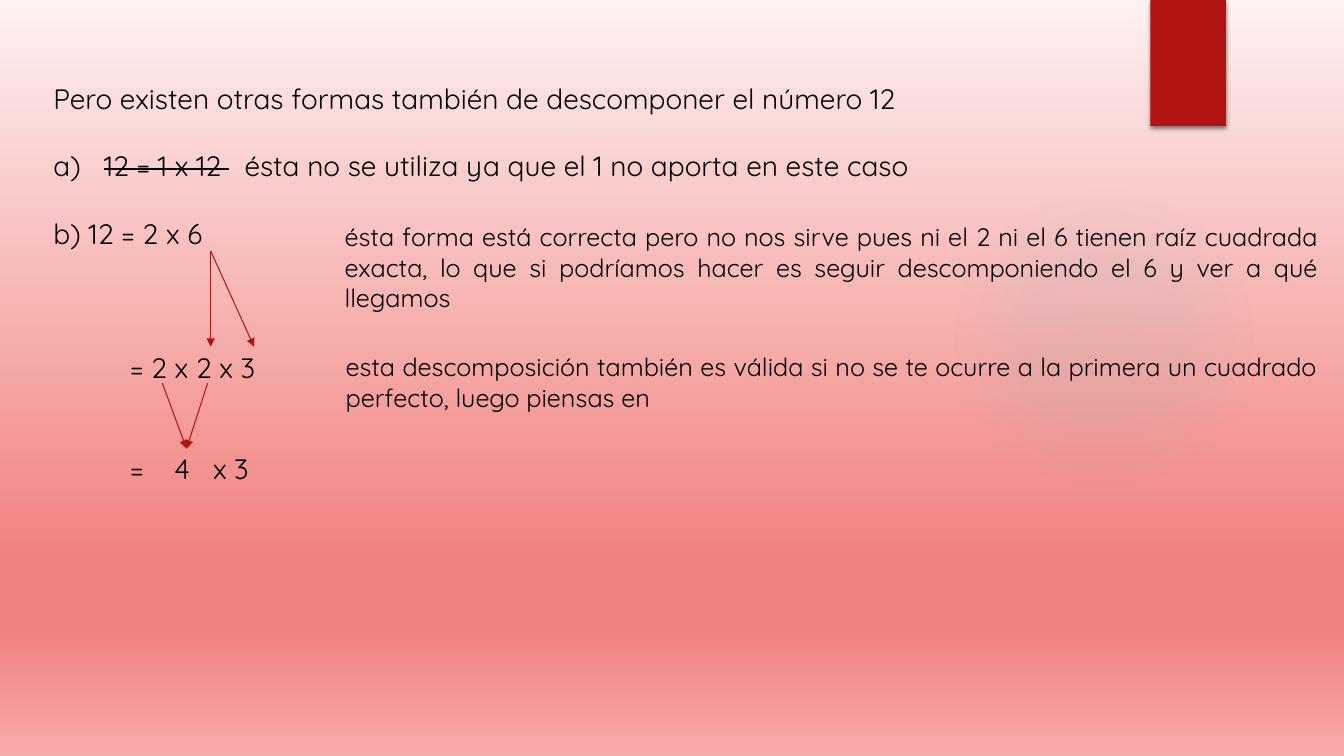
from lxml.etree import SubElement
from pptx import Presentation
from pptx.dml.color import RGBColor
from pptx.enum.shapes import MSO_CONNECTOR as Link, MSO_SHAPE as Form
from pptx.enum.text import MSO_ANCHOR as Anchor, MSO_AUTO_SIZE as Auto, PP_ALIGN as Align
from pptx.oxml.ns import qn
from pptx.util import Inches, Pt

RED = RGBColor(0xB0, 0x15, 0x13)
BLACK = RGBColor(0, 0, 0)
PALE = RGBColor(0xFD, 0xF1, 0xF1)
CORAL = RGBColor(0xF1, 0x81, 0x7F)
PINK = RGBColor(0xF6, 0xAB, 0xAA)
TEAL = RGBColor(0x50, 0xB9, 0xC1)
ROW = 24  # points from one line of the working to the next

TITLE = "Pero existen otras formas también de descomponer el número 12"
NOTES = [
    ((3.32, 2.15, 9.85, 1.01),
     "ésta forma está correcta pero no nos sirve pues ni el 2 ni el 6 tienen raíz "
     "cuadrada exacta, lo que si podríamos hacer es seguir descomponiendo el 6 y "
     "ver a qué llegamos"),
    ((3.33, 3.44, 9.83, 0.71),
     "esta descomposición también es válida si no se te ocurre a la primera un "
     "cuadrado perfecto, luego piensas en"),
]
# Runs with the points by which each is spaced out, empty rows above, left margin
STEPS = [
    ([("b) 12 = 2 x 6", 0)], 1, 0),
    ([("= 2 x 2 x 3", 0)], 3, 0.76),
    ([("=", 0), (" ", 16.5), ("4", 0), (" ", 11), ("x 3", 0)], 2, 0.76),
]
SPLIT = [((2.09, 2.49), (2.09, 3.44)), ((2.09, 2.49), (2.52, 3.44))]
JOIN = [((1.61, 3.8), (1.85, 4.45)), ((2.06, 3.8), (1.85, 4.45))]


def add(parent, tag, **attrs):
    return SubElement(parent, qn(tag), {k: str(v) for k, v in attrs.items()})


def place(shape, box):
    for name, size in zip(("left", "top", "width", "height"), box):
        setattr(shape, name, Inches(size))


def blend(fill, owner, stops, radial=False):
    """Fill with a gradient of (place, colour, opacity) stops, in percent."""
    fill.gradient()
    grad = owner.find(".//" + qn("a:gradFill"))
    for part in list(grad):
        grad.remove(part)
    row = add(grad, "a:gsLst")
    for pos, color, alpha in stops:
        stop = add(row, "a:gs", pos=pos * 1000)
        tint = add(stop, "a:srgbClr", val=color)
        if alpha < 100:
            add(tint, "a:alpha", val=alpha * 1000)
    if radial:
        way = add(grad, "a:path", path="circle")
        add(way, "a:fillToRect", l=50000, t=50000, r=50000, b=50000)
    else:
        add(grad, "a:lin", ang=90 * 60000, scaled=0)


def style(par, size, align=Align.LEFT, gap=0):
    for name, value in {"alignment": align, "space_before": Pt(gap),
                        "space_after": Pt(0)}.items():
        setattr(par, name, value)
    for run in par.runs:
        for name, value in {"name": "Quicksand", "size": Pt(size)}.items():
            setattr(run.font, name, value)
        run.font.color.rgb = BLACK


def indent(par, margin, hang=0):
    """Set the left margin and hanging indent, and return the properties."""
    props = par._p.get_or_add_pPr()
    props.set("marL", str(Inches(margin)))
    props.set("indent", str(-Inches(hang)))
    return props


def write(par, words, spread=0):
    run = par.add_run()
    run.text = words
    if spread:
        run.font._element.set("spc", str(int(spread * 100)))
    return run


def frame(shape, box):
    place(shape, box)
    text = shape.text_frame
    for name, value in {"word_wrap": True, "auto_size": Auto.NONE,
                        "vertical_anchor": Anchor.TOP}.items():
        setattr(text, name, value)
    return text


def backdrop(slide):
    blend(slide.background.fill, slide.element,
          [(0, PALE, 100), (74, CORAL, 100), (83, CORAL, 100), (100, PINK, 100)])
    glow = slide.shapes.add_shape(Form.OVAL, *map(Inches, (9.41, 1.83, 3.08, 3.08)))
    blend(glow.fill, glow.element.spPr,
          [(0, TEAL, 7), (36, TEAL, 6), (69, TEAL, 0)], radial=True)
    tab = slide.shapes.add_shape(Form.RECTANGLE, *map(Inches, (11.41, 0, 0.75, 1.25)))
    tab.fill.solid()
    tab.fill.fore_color.rgb = RED
    for shape in (tab, glow):
        shape.line.fill.background()
        shape.shadow.inherit = False
        slide.shapes.element.insert(2, shape.element)  # behind the text
    effects = tab.element.spPr.find(qn("a:effectLst"))
    shade = add(effects, "a:outerShdw", blurRad=Pt(3), dist=Pt(2),
                dir=90 * 60000, rotWithShape=0)
    add(add(shade, "a:srgbClr", val=BLACK), "a:alpha", val=45000)


def working(slide, box):
    """Write the heading and, two rows below it, the list of factorings."""
    left, top, width, height = box
    drop = 2 * ROW / 72
    head = frame(slide.shapes.title, (left, top, width, drop))
    head.text = TITLE
    style(head.paragraphs[0], 20)

    body = frame(slide.placeholders[1], (left, top + drop, width, height - drop))
    first = body.paragraphs[0]
    props = indent(first, 0.5, 0.5)
    add(props, "a:buFont", typeface="Quicksand")
    add(props, "a:buAutoNum", type="alphaLcParenR")
    for words, spread in (("12 = 1 x 12", 0), (" ", 11)):
        write(first, words, spread).font._element.set("strike", "sngStrike")
    write(first, "ésta no se utiliza ya que el 1 no aporta en este caso")
    style(first, 20)

    for parts, empty, margin in STEPS:
        par = body.add_paragraph()
        add(indent(par, margin), "a:buNone")
        for words, spread in parts:
            write(par, words, spread)
        style(par, 20, gap=empty * ROW)


def note(slide, box, words):
    text = frame(slide.shapes.add_textbox(0, 0, 0, 0), box)
    text.text = words
    style(text.paragraphs[0], 18, Align.JUSTIFY)


def arrow(slide, start, end):
    line = slide.shapes.add_connector(Link.STRAIGHT, *map(Inches, start + end))
    line.line.color.rgb = RED
    line.line.width = Pt(0.75)
    add(line.line._get_or_add_ln(), "a:tailEnd", type="triangle")
    add(line.element.spPr, "a:effectLst")


def main():
    deck = Presentation()
    deck.slide_width, deck.slide_height = Inches(13.33), Inches(7.5)
    slide = deck.slides.add_slide(deck.slide_layouts[1])
    backdrop(slide)
    working(slide, (0.43, 0.76, 12.9, 5.15))
    for start, end in SPLIT + JOIN:
        arrow(slide, start, end)
    for box, words in NOTES:
        note(slide, box, words)
    deck.save("out.pptx")


if __name__ == "__main__":
    main()
